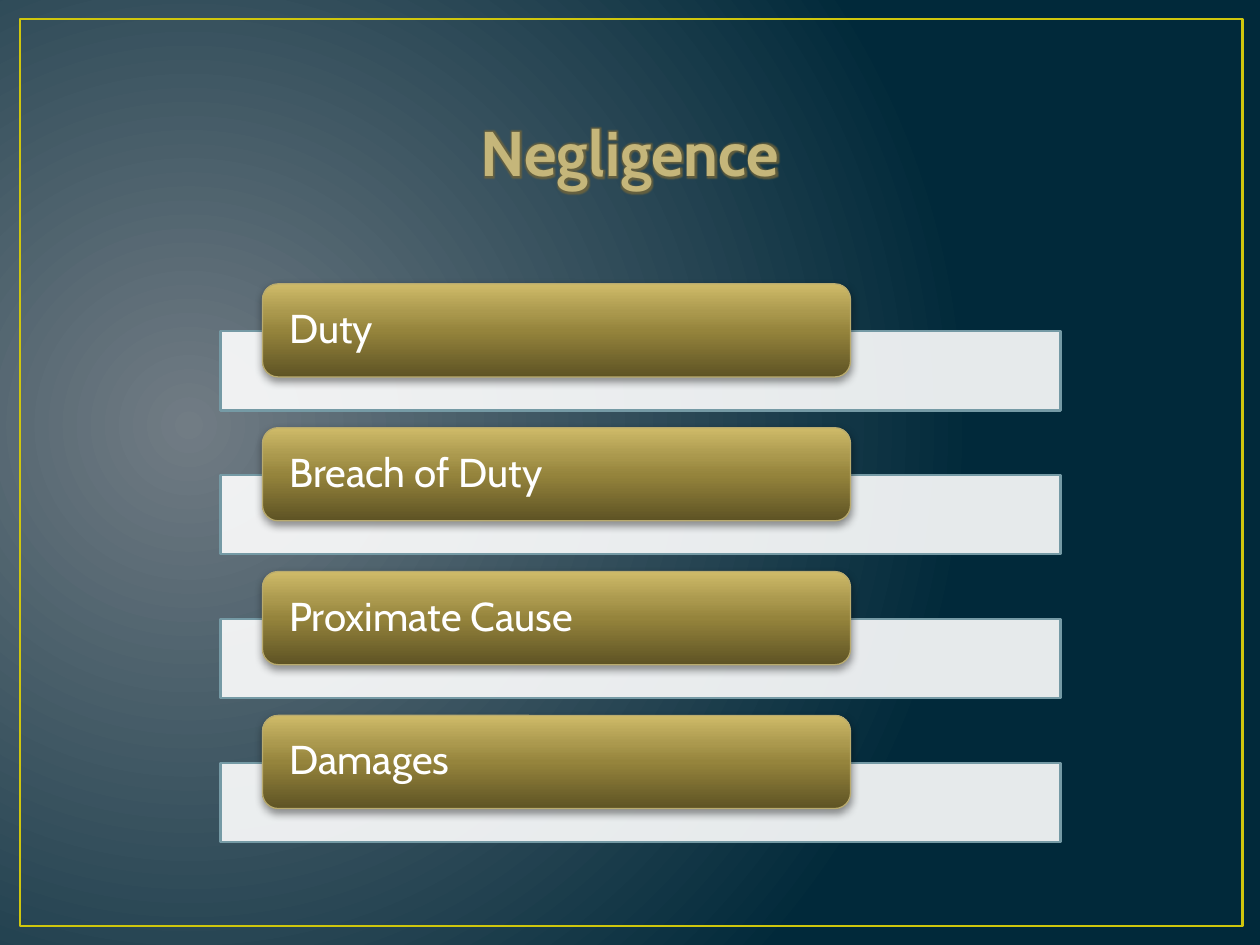
"""Build the slide that lists the four elements of negligence."""
from dataclasses import dataclass

from lxml.etree import SubElement
from pptx import Presentation
from pptx.dml.color import RGBColor as RGB
from pptx.enum.shapes import MSO_SHAPE as Preset
from pptx.enum.text import MSO_ANCHOR as Anchor, PP_ALIGN as Align
from pptx.oxml import parse_xml
from pptx.oxml.ns import nsdecls, qn
from pptx.util import Pt


@dataclass(frozen=True)
class Theme:
    font: str = "Cabin"
    title_size: float = 36
    label_size: float = 23
    white: str = "FFFFFF"
    frame: str = "CFC60D"
    bar_edge: str = "759AA5"
    label_edge: str = "B9AB6F"
    glow: str = "75673A"
    shadow: str = "000000"
    backdrop: tuple = ((0, "717C84"), (100, "01293A"))
    title_fill: tuple = ((0, "C7B982"), (25, "C5B67A"), (50, "B3A566"),
                         (75, "C5B67A"), (100, "C7B982"))
    label_fill: tuple = ((0, "5E5324"), (50, "95843C"), (70, "AB994E"), (100, "CFBB69"))


THEME = Theme()
ELEMENTS = ("Duty", "Breach of Duty", "Proximate Cause", "Damages")
ROW_PITCH = 82.2
LINEAR = '<a:lin ang="{}" scaled="0"/>'
RADIAL = '<a:path path="circle"><a:fillToRect l="15000" t="50000" r="85000" b="60000"/></a:path>'


def apply_gradient(fill, holder, stops, direction):
    fill.solid()
    fill.fore_color.rgb = RGB.from_string(stops[0][1])
    solid = next(holder.iter(qn("a:solidFill")))
    stop_xml = "".join(f'<a:gs pos="{position * 1000}"><a:srgbClr val="{color}"/></a:gs>'
                       for position, color in stops)
    gradient = parse_xml(f'<a:gradFill {nsdecls("a")} rotWithShape="1">'
                         f'<a:gsLst>{stop_xml}</a:gsLst>{direction}</a:gradFill>')
    solid.getparent().replace(solid, gradient)
    return gradient


def add_effect(effects, kind, color, opacity, **settings):
    effect = SubElement(effects, qn(f"a:{kind}"), {key: str(int(value)) for key, value in settings.items()})
    tint = SubElement(effect, qn("a:srgbClr"), val=color)
    SubElement(tint, qn("a:alpha"), val=str(opacity * 1000))


def add_outlined(slide, preset, box, edge, weight):
    outlined = slide.shapes.add_shape(preset, *map(Pt, box))
    outlined.shadow.inherit = False
    outlined.fill.background()
    outlined.line.color.rgb = RGB.from_string(edge)
    outlined.line.width = Pt(weight)
    return outlined


def style_run(run, size, bold=False):
    run.font.name = THEME.font
    run.font.size = Pt(size)
    run.font.bold = bold


def set_title(slide, wording):
    title = slide.shapes.title
    title.left, title.top, title.width, title.height = map(Pt, (36, 21.6, 648, 90))
    frame = title.text_frame
    frame.text = wording
    frame.vertical_anchor = Anchor.BOTTOM
    frame.paragraphs[0].alignment = Align.CENTER
    run = frame.paragraphs[0].runs[0]
    style_run(run, THEME.title_size, bold=True)
    gradient = apply_gradient(run.font.fill, title.element.txBody, THEME.title_fill, LINEAR.format(5400000))
    effects = parse_xml(f'<a:effectLst {nsdecls("a")}/>')
    gradient.addnext(effects)
    add_effect(effects, "glow", THEME.glow, 80, rad=Pt(4))


def add_bar(slide, top):
    bar = add_outlined(slide, Preset.RECTANGLE, (126, top, 480, 45.4), THEME.bar_edge, 1.25)
    bar.fill.solid()
    bar.fill.fore_color.rgb = RGB.from_string(THEME.white)
    tint = next(bar.element.spPr.iter(qn("a:srgbClr")))
    SubElement(tint, qn("a:alpha"), val="90000")


def add_label(slide, top, wording):
    label = add_outlined(slide, Preset.ROUNDED_RECTANGLE, (150, top, 336, 53.2), THEME.label_edge, 0.75)
    apply_gradient(label.fill, label.element.spPr, THEME.label_fill, LINEAR.format(16200000))
    add_effect(label.element.spPr.find(qn("a:effectLst")), "outerShdw", THEME.shadow, 43,
               blurRad=Pt(5), dist=Pt(2), dir=5400000)
    frame = label.text_frame
    frame.text = wording
    frame.word_wrap = True
    frame.vertical_anchor = Anchor.MIDDLE
    frame.margin_left = frame.margin_right = Pt(12.7)
    frame.margin_top = frame.margin_bottom = 0
    paragraph = frame.paragraphs[0]
    paragraph.alignment = Align.LEFT
    paragraph.line_spacing = 0.9
    style_run(paragraph.runs[0], THEME.label_size)
    paragraph.runs[0].font.color.rgb = RGB.from_string(THEME.white)


def main():
    deck = Presentation()
    deck.slide_width, deck.slide_height = Pt(720), Pt(540)
    slide = deck.slides.add_slide(deck.slide_layouts[5])
    apply_gradient(slide.background.fill, slide.element.cSld, THEME.backdrop, RADIAL)
    add_outlined(slide, Preset.RECTANGLE, (11.5, 10.8, 698.4, 518.4), THEME.frame, 1.5)
    set_title(slide, "Negligence")
    for row, element in enumerate(ELEMENTS):
        add_bar(slide, 189.2 + row * ROW_PITCH)
        add_label(slide, 162.2 + row * ROW_PITCH, element)
    deck.save("out.pptx")


if __name__ == "__main__":
    main()
